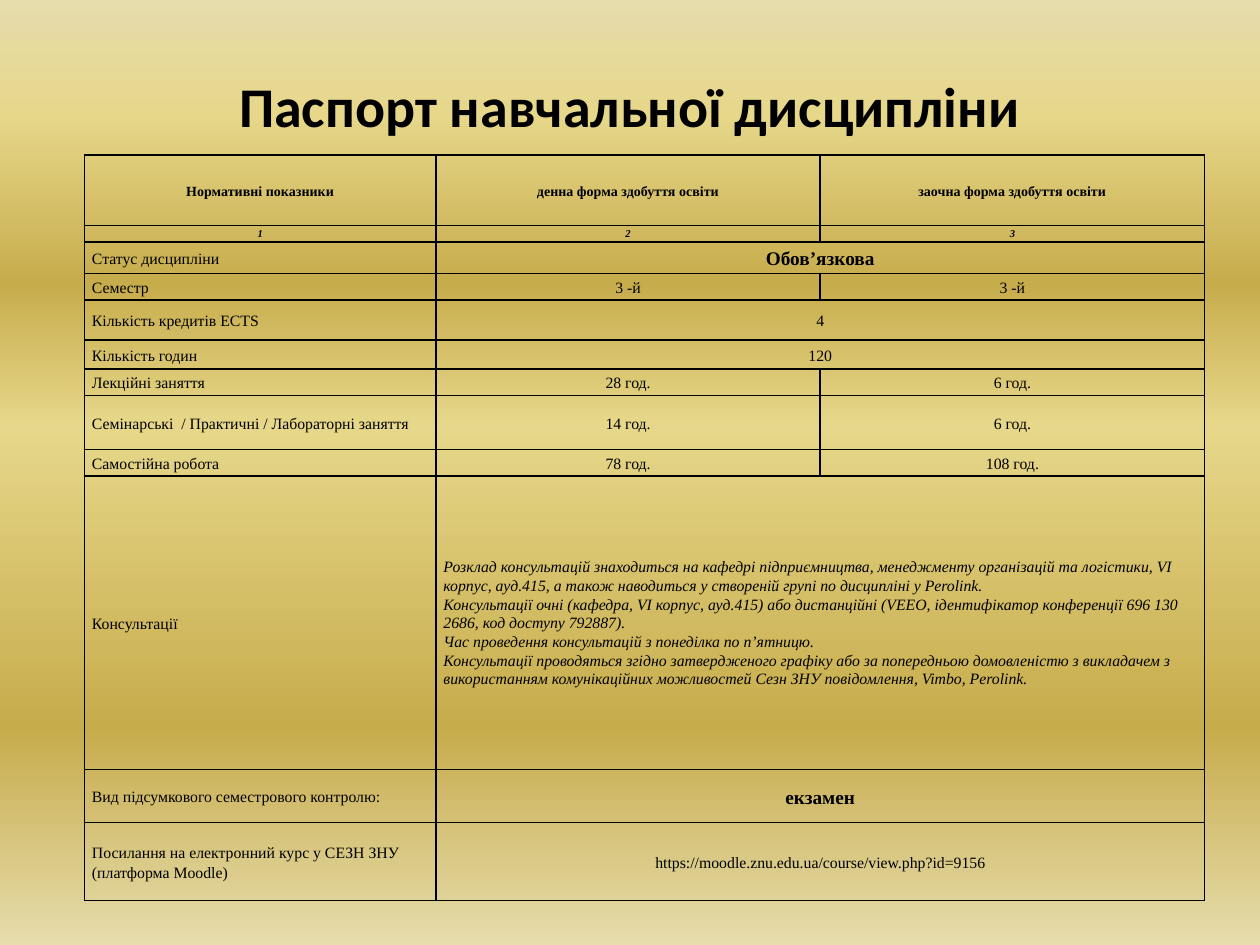
from pptx import Presentation
from pptx.dml.color import RGBColor as RGB
from pptx.enum.text import MSO_ANCHOR as ANCHOR, PP_ALIGN as ALIGN
from pptx.oxml import parse_xml
from pptx.oxml.ns import nsdecls, qn
from pptx.util import Inches, Pt

COLORS = {"text": "000000", "border": "000000", "pale": "E6DCAC", "light": "E6D78A", "gold": "C7AC4C"}
STOPS = [(0, "pale"), (12, "light"), (30, "gold"), (45, "light"), (77, "gold"), (100, "pale")]


def write(tf, text, size=9, font="Times New Roman", bold=False, italic=False,
          align=ALIGN.LEFT, line=1.15, gap=0):
    for i, part in enumerate(text.split("\n")):
        p = tf.paragraphs[0] if i == 0 else tf.add_paragraph()
        p.alignment = align
        p.line_spacing = line
        p.space_before = Pt(0)
        p.space_after = Pt(gap)
        r = p.add_run()
        r.text = part
        r.font.size = Pt(size)
        r.font.name = font
        r.font.bold = bold
        r.font.italic = italic
        r.font.color.rgb = RGB.from_string(COLORS["text"])


prs = Presentation()
prs.slide_width, prs.slide_height = Inches(10), Inches(7.5)
s = prs.slides.add_slide(prs.slide_layouts[6])

fill = s.background.fill
fill.gradient()
fill.gradient_angle = 270
stops = next(s.element.iter(qn("a:gsLst")))
for stop in list(stops):
    stops.remove(stop)
for pos, color in STOPS:
    stops.append(parse_xml(
        f'<a:gs {nsdecls("a")} pos="{pos * 1000}"><a:srgbClr val="{COLORS[color]}"/></a:gs>'))

tf = s.shapes.add_textbox(Inches(0.5), Inches(0.52), Inches(9), Inches(6.18)).text_frame
tf.word_wrap = True
write(tf, "Паспорт навчальної дисципліни", size=32, font="Calibri", bold=True, align=ALIGN.CENTER, line=1.0)

HEAD = dict(size=8, bold=True, align=ALIGN.CENTER)
NUMBER = dict(size=6, bold=True, italic=True, align=ALIGN.CENTER, line=1.07)
LABEL = dict()
SPACED = dict(gap=3)
VALUE = dict(align=ALIGN.CENTER)
STRONG = dict(size=11, bold=True, align=ALIGN.CENTER)
NOTE = dict(italic=True, line=1.07)

consultations = "\n".join([
    "Розклад консультацій знаходиться на кафедрі підприємництва, менеджменту організацій та логістики, VІ корпус, ауд.415, а також наводиться у створеній групі по дисципліні у Perolink.",
    "Консультації очні (кафедра, VІ корпус, ауд.415) або дистанційні (VEEO, ідентифікатор конференції 696 130 2686, код доступу 792887).",
    "Час проведення консультацій з понеділка по п’ятницю.",
    "Консультації проводяться згідно затвердженого графіку або за попередньою домовленістю з викладачем з використанням комунікаційних можливостей Сезн ЗНУ повідомлення, Vimbo, Perolink.",
])
rows = [
    (0.56, HEAD, HEAD, ["Нормативні показники", "денна форма здобуття освіти", "заочна форма здобуття освіти"]),
    (0.13, NUMBER, NUMBER, ["1", "2", "3"]),
    (0.25, SPACED, STRONG, ["Статус дисципліни", "Обов’язкова"]),
    (0.21, SPACED, VALUE, ["Семестр", "3 -й", "3 -й"]),
    (0.32, SPACED, VALUE, ["Кількість кредитів ECTS", "4"]),
    (0.23, SPACED, VALUE, ["Кількість годин", "120"]),
    (0.21, LABEL, VALUE, ["Лекційні заняття", "28 год.", "6 год."]),
    (0.43, LABEL, VALUE, ["Семінарські  / Практичні / Лабораторні заняття", "14 год.", "6 год."]),
    (0.21, LABEL, VALUE, ["Самостійна робота", "78 год.", "108 год."]),
    (2.33, LABEL, NOTE, ["Консультації", consultations]),
    (0.42, LABEL, STRONG, ["Вид підсумкового семестрового контролю:", "екзамен"]),
    (0.62, LABEL, VALUE, ["Посилання на електронний курс у СЕЗН ЗНУ (платформа Moodle)",
                          "https://moodle.znu.edu.ua/course/view.php?id=9156"]),
]
widths = [2.79, 3.05, 3.05]
table = s.shapes.add_table(len(rows), len(widths), Inches(0.67), Inches(1.23),
                           Inches(sum(widths)), Inches(sum(row[0] for row in rows))).table
table.first_row = table.horz_banding = False
for column, width in zip(table.columns, widths):
    column.width = Inches(width)

for i, (height, label_format, value_format, texts) in enumerate(rows):
    table.rows[i].height = Inches(height)
    if len(texts) == 2:
        table.cell(i, 1).merge(table.cell(i, 2))
    for j in range(len(widths)):
        cell = table.cell(i, j)
        cell.vertical_anchor = ANCHOR.MIDDLE
        cell.margin_left = cell.margin_right = Inches(0.06)
        cell.margin_top = cell.margin_bottom = 0
        for side in ("lnL", "lnR", "lnT", "lnB"):
            cell._tc.get_or_add_tcPr().append(parse_xml(
                f'<a:{side} {nsdecls("a")} w="{Pt(1)}"><a:solidFill>'
                f'<a:srgbClr val="{COLORS["border"]}"/></a:solidFill></a:{side}>'))
        cell.fill.background()
        if j < len(texts):
            write(cell.text_frame, texts[j], **(value_format if j else label_format))

prs.save("out.pptx")
